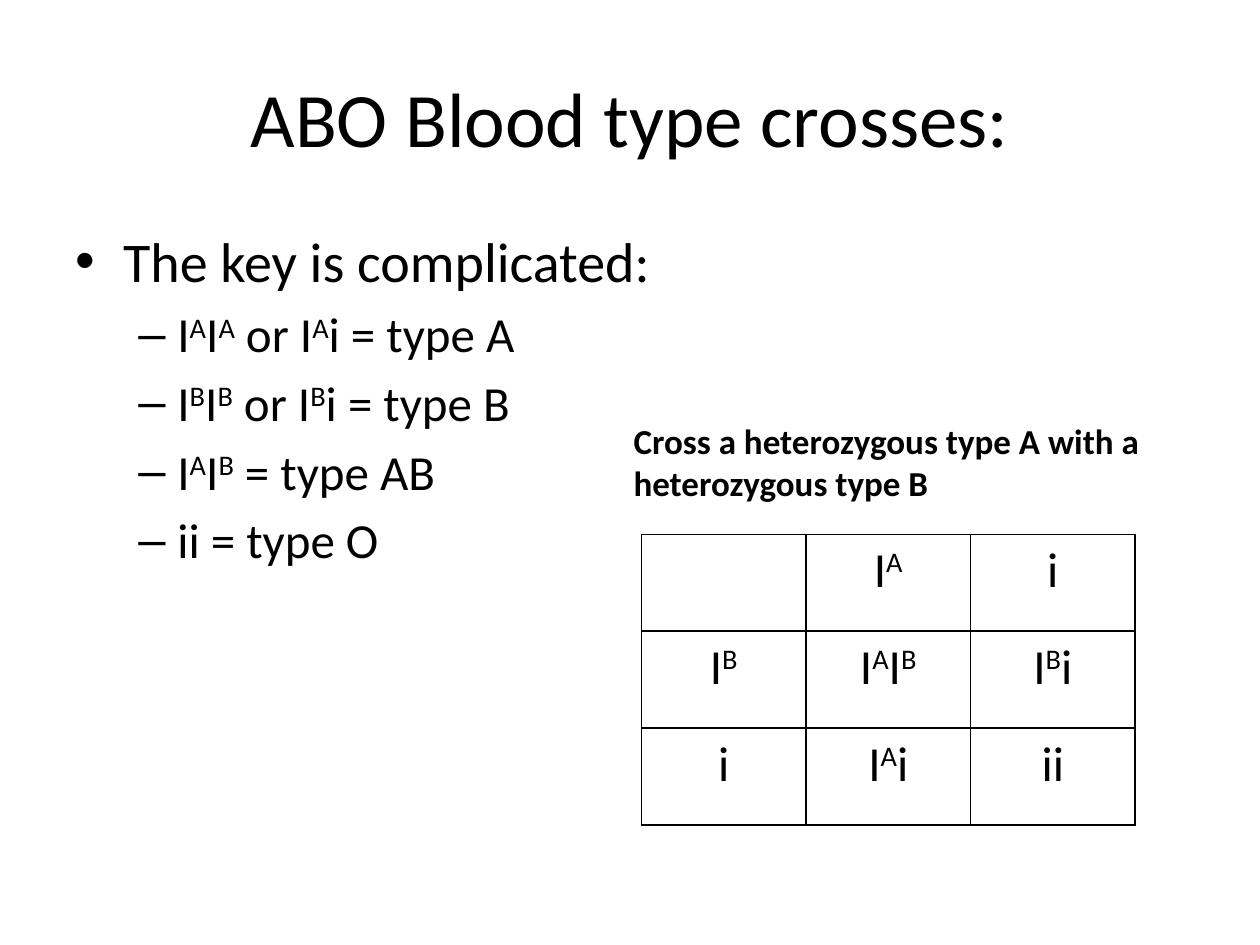
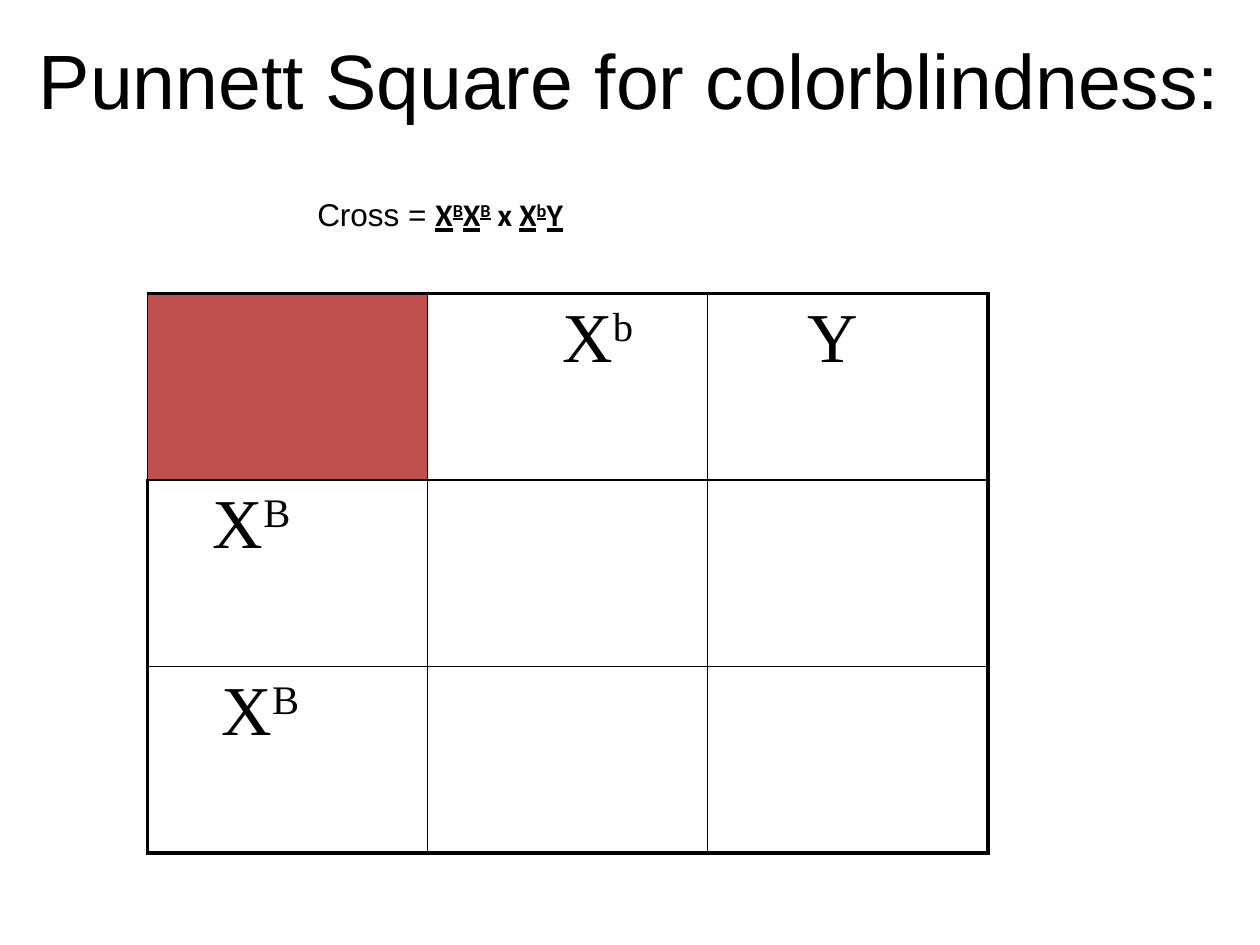
from lxml.etree import SubElement
from pptx import Presentation
from pptx.dml.color import RGBColor
from pptx.enum.text import MSO_ANCHOR as Anchor, PP_ALIGN as Align
from pptx.oxml.ns import qn
from pptx.util import Inches, Pt

BLACK, RED = "000000", "C0504D"
SANS, PLAIN, SERIF = "Calibri", "Arial", "Times New Roman"
THIN, THICK = 1, 2.25


def color(code):
    return RGBColor.from_string(code)


def write(para, text, size=28, font=SANS, bold=False, line=False):
    """Add text to a paragraph; parts between carets are superscript."""
    for i, part in enumerate(text.split("^")):
        if not part:
            continue
        run = para.add_run()
        run.text = part
        run.font.size, run.font.name = Pt(size), font
        run.font.bold, run.font.underline = bold, line
        run.font.color.rgb = color(BLACK)
        if i % 2:
            run._r.get_or_add_rPr().set("baseline", "30000")


def add_slide(deck, title, top, left, width, font):
    slide = deck.slides.add_slide(deck.slide_layouts[5])
    head = slide.shapes.title
    head.left, head.top = Inches(left), Inches(top)
    head.width, head.height = Inches(width), Inches(1.25)
    frame = head.text_frame
    frame.vertical_anchor = Anchor.MIDDLE
    para = frame.paragraphs[0]
    para.alignment = Align.CENTER
    write(para, title, size=44, font=font)
    return slide


def add_box(slide, *place):
    frame = slide.shapes.add_textbox(*map(Inches, place)).text_frame
    frame.word_wrap = True
    return frame


def set_bullet(para, mark, margin, hang):
    props = para._p.get_or_add_pPr()
    props.set("marL", str(Inches(margin)))
    props.set("indent", str(Inches(-hang)))
    SubElement(props, qn("a:buFont"), typeface=PLAIN)
    SubElement(props, qn("a:buChar"), char=mark)


def add_list(slide, lead, items):
    frame = add_box(slide, 0.5, 1.75, 9, 4.95)
    para = frame.paragraphs[0]
    para.space_before = Pt(6.4)
    set_bullet(para, "•", 0.38, 0.38)
    write(para, lead, size=32)
    for item in items:
        para = frame.add_paragraph()
        para.level = 1
        para.space_before = Pt(5.6)
        set_bullet(para, "–", 0.81, 0.31)
        write(para, item)


def set_edges(cell, **widths):
    props = cell._tc.get_or_add_tcPr()
    for side in "LRTB":
        edge = SubElement(props, qn(f"a:ln{side}"), w=str(Pt(widths[side])))
        fill = SubElement(edge, qn("a:solidFill"))
        SubElement(fill, qn("a:srgbClr"), val=BLACK)


def add_square(slide, rows, left, top, width, height, rim=THIN):
    """Add a Punnett square with an outer rim; return its table."""
    count = len(rows)
    table = slide.shapes.add_table(
        count, count, *map(Inches, (left, top, width, height))).table
    table.first_row = table.horz_banding = False
    last = count - 1
    for r, row in enumerate(rows):
        for c, text in enumerate(row):
            cell = table.cell(r, c)
            set_edges(cell,
                      L=rim if c == 0 and r else THIN,
                      R=rim if c == last else THIN,
                      T=rim if r == 0 else THIN,
                      B=rim if r == last else THIN)
            cell.fill.background()
            if text:
                yield_text(cell, text, rim)
    return table


def yield_text(cell, text, rim):
    """Fill a cell: centred, or in large serif type when the rim is thick."""
    para = cell.text_frame.paragraphs[0]
    if rim == THIN:
        para.alignment = Align.CENTER
        write(para, text)
    else:
        write(para, text, size=40, font=SERIF)


def add_blood(deck):
    slide = add_slide(deck, "ABO Blood type crosses:", 0.3, 0.5, 9, SANS)
    add_list(slide, "The key is complicated:", [
        "I^A^I^A^ or I^A^i = type A",
        "I^B^I^B^ or I^B^i = type B",
        "I^A^I^B^ = type AB",
        "ii = type O",
    ])
    note = add_box(slide, 4.93, 3.28, 4.23, 0.77)
    write(note.paragraphs[0],
          "Cross a heterozygous type A with a heterozygous type B",
          size=20, bold=True)
    add_square(slide, [
        ["", "I^A^", "i"],
        ["I^B^", "I^A^I^B^", "I^B^i"],
        ["i", "I^A^i", "ii"],
    ], 5.09, 4.24, 3.92, 2.31)


def add_vision(deck):
    slide = add_slide(deck, "Punnett Square for colorblindness:",
                      0, 0, 10, PLAIN)
    table = add_square(slide, [
        ["", "X^b^", "Y"],
        ["X^B^", "", ""],
        ["X^B^", "", ""],
    ], 1.17, 2.33, 6.67, 4.44, rim=THICK)
    fill = table.cell(0, 0).fill
    fill.solid()
    fill.fore_color.rgb = color(RED)
    for r, c, inset in [(0, 1, 1.07), (0, 2, 0.79),
                        (1, 0, 0.52), (2, 0, 0.59)]:
        table.cell(r, c).margin_left = Inches(inset)

    para = add_box(slide, 2.42, 1.5, 5.33, 0.5).paragraphs[0]
    write(para, "Cross = ", size=18, font=PLAIN)
    for text, line in [("X^B^X^B^", True), (" x ", False), ("X^b^Y", True)]:
        write(para, text, size=18, bold=True, line=line)


def main():
    deck = Presentation()
    deck.slide_width, deck.slide_height = Inches(10), Inches(7.5)
    add_blood(deck)
    add_vision(deck)
    deck.save("out.pptx")


if __name__ == "__main__":
    main()
